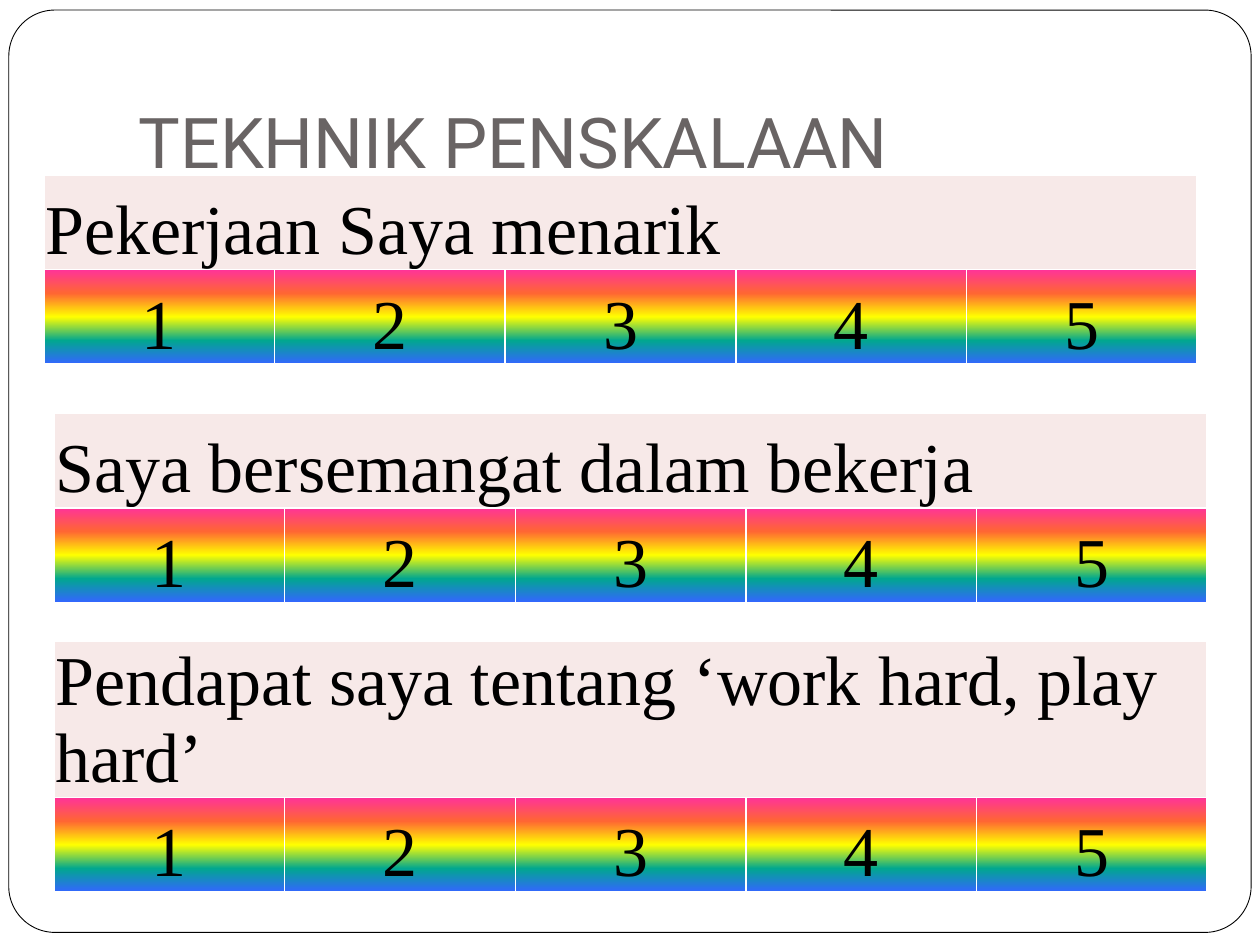
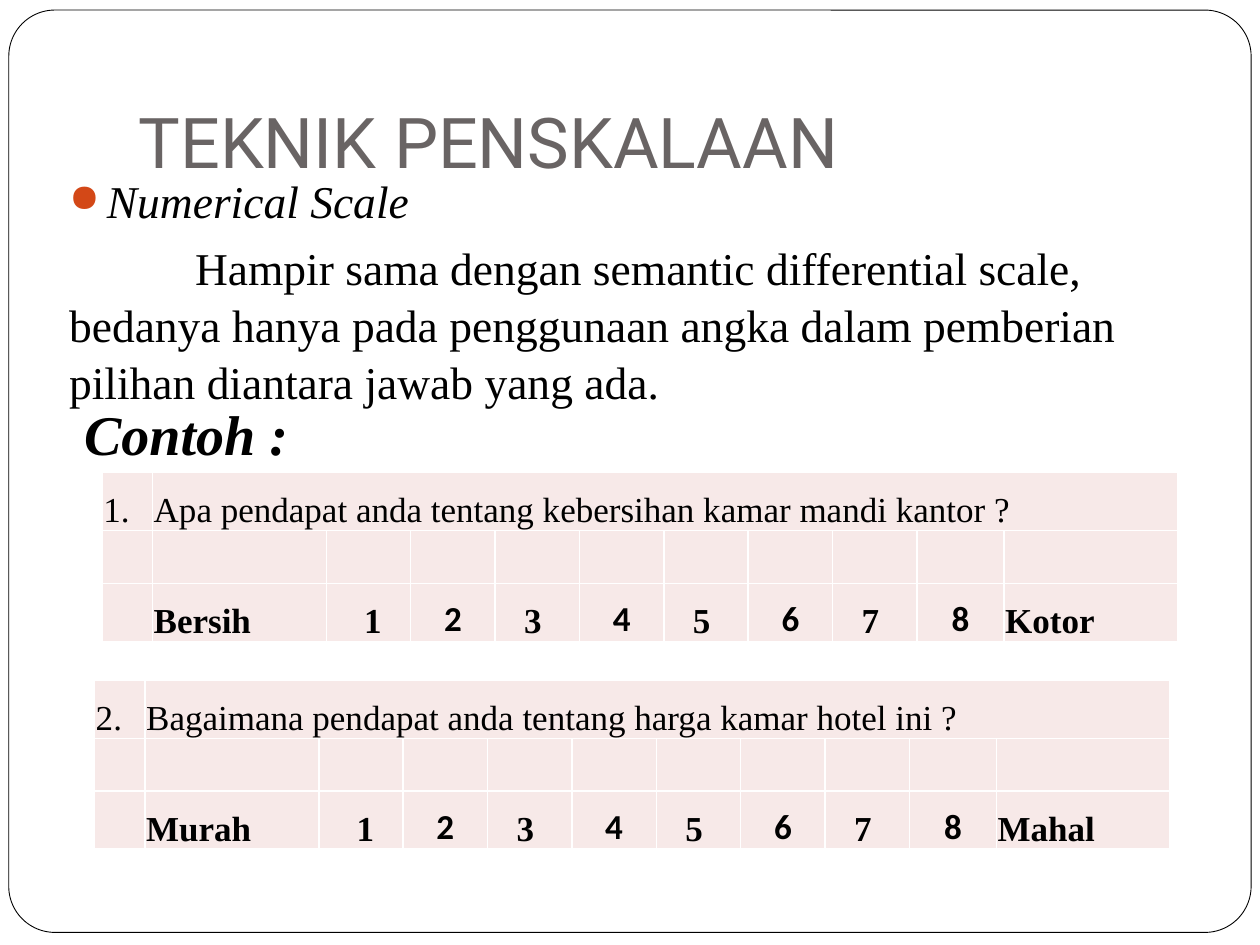
"""Build two slides on scaling techniques with rating-scale tables."""
from dataclasses import dataclass
from typing import Optional

from lxml.etree import SubElement
from pptx import Presentation
from pptx.dml.color import RGBColor
from pptx.enum.shapes import MSO_SHAPE
from pptx.enum.text import MSO_ANCHOR, PP_ALIGN
from pptx.oxml import parse_xml
from pptx.oxml.ns import nsdecls, qn
from pptx.util import Inches, Pt

BLACK = RGBColor(0x00, 0x00, 0x00)
WHITE = RGBColor(0xFF, 0xFF, 0xFF)
TITLE_GRAY = RGBColor(0x69, 0x64, 0x64)
CELL_PINK = RGBColor(0xF7, 0xE9, 0xE8)
BULLET_ORANGE = RGBColor(0xD3, 0x48, 0x17)
RAINBOW = (
    RGBColor(0xFF, 0x33, 0x99),
    RGBColor(0xFF, 0x66, 0x33),
    RGBColor(0xFF, 0xFF, 0x00),
    RGBColor(0x01, 0xA7, 0x8F),
    RGBColor(0x33, 0x66, 0xFF),
)
SERIF = "Times New Roman"
SANS = "Calibri"
TITLE_FONT = "Roboto"
CELL_MARGIN = 0.01
DIGIT_SHIFT = 0.07


@dataclass(frozen=True)
class TextStyle:
    """Character formatting of a run."""

    size: float
    font: str = SERIF
    color: RGBColor = BLACK
    bold: bool = False
    italic: bool = False


@dataclass(frozen=True)
class RatingScale:
    """A statement rated from 1 to 5."""

    left: float
    top: float
    statement: str


@dataclass(frozen=True)
class NumericalScale:
    """A numbered question rated between two opposite words."""

    left: float
    top: float
    number: str
    question: str
    low_word: str
    high_word: str


RATING_SCALES = (
    RatingScale(0.35, 1.39, "Pekerjaan Saya menarik"),
    RatingScale(0.43, 3.28, "Saya bersemangat dalam bekerja"),
    RatingScale(0.43, 5.09, "Pendapat saya tentang ‘work hard, play hard’"),
)
NUMERICAL_SCALES = (
    NumericalScale(0.81, 3.75, "1.", "Apa pendapat anda tentang kebersihan kamar mandi kantor ?",
                   "Bersih", "Kotor"),
    NumericalScale(0.75, 5.4, "2.", "Bagaimana pendapat anda tentang harga kamar hotel ini ?",
                   "Murah", "Mahal"),
)
RATING_WIDTHS = [1.826] * 5
RATING_WIDTHS = [1.83] * 5
RATING_HEIGHTS = [0.75] * 2
NUMERICAL_WIDTHS = [0.4, 1.38] + [0.67] * 7 + [0.69, 1.38]
NUMERICAL_HEIGHTS = [0.46, 0.42, 0.46]


def add_run(paragraph, text: str, style: TextStyle) -> None:
    """Append a formatted run to a paragraph."""
    run = paragraph.add_run()
    run.text = text
    run.font.size = Pt(style.size)
    run.font.name = style.font
    run.font.color.rgb = style.color
    run.font.bold = style.bold
    run.font.italic = style.italic


def add_frame(slide) -> None:
    """Draw the rounded frame and place it on the layout of the slide."""
    frame = slide.shapes.add_shape(
        MSO_SHAPE.ROUNDED_RECTANGLE, Inches(0.07), Inches(0.08), Inches(9.86), Inches(7.32))
    frame.adjustments[0] = 0.05
    frame.shadow.inherit = False
    frame.fill.solid()
    frame.fill.fore_color.rgb = WHITE
    frame.line.color.rgb = BLACK
    frame.line.width = Pt(0.5)
    slide.slide_layout.shapes._spTree.insert(2, frame._element)


def set_title(slide, text: str) -> None:
    """Place and format the title placeholder."""
    title = slide.shapes.title
    title.left, title.top = Inches(1), Inches(0.3)
    title.width, title.height = Inches(8.5), Inches(1.25)
    text_frame = title.text_frame
    text_frame.vertical_anchor = MSO_ANCHOR.BOTTOM
    text_frame.margin_bottom = Inches(0.1)
    paragraph = text_frame.paragraphs[0]
    paragraph.alignment = PP_ALIGN.LEFT
    add_run(paragraph, text, TextStyle(40, TITLE_FONT, TITLE_GRAY))


def add_text_frame(slide, left: float, top: float, width: float, height: float):
    """Add a wrapping text box and return its text frame."""
    box = slide.shapes.add_textbox(Inches(left), Inches(top), Inches(width), Inches(height))
    box.text_frame.word_wrap = True
    return box.text_frame


def set_indent(paragraph, margin: float, first_line: float) -> None:
    """Set the left margin and first-line indent of a paragraph."""
    properties = paragraph._p.get_or_add_pPr()
    properties.set("marL", str(Inches(margin)))
    properties.set("indent", str(Inches(first_line)))


def add_bullet(paragraph) -> None:
    """Give a paragraph a round orange bullet."""
    properties = paragraph._p.get_or_add_pPr()
    color = SubElement(properties, qn("a:buClr"))
    SubElement(color, qn("a:srgbClr")).set("val", str(BULLET_ORANGE))
    SubElement(properties, qn("a:buSzPct")).set("val", "85000")
    SubElement(properties, qn("a:buChar")).set("char", "●")


def border_cell(cell) -> None:
    """Draw white one-point borders on all sides of a cell."""
    properties = cell._tc.get_or_add_tcPr()
    for index, side in enumerate(("lnL", "lnR", "lnT", "lnB")):
        properties.insert(index, parse_xml(
            f'<a:{side} {nsdecls("a")} w="{Pt(1)}"><a:solidFill>'
            f'<a:srgbClr val="{WHITE}"/></a:solidFill></a:{side}>'))


def fill_rainbow(cell) -> None:
    """Fill a cell with the vertical rainbow gradient."""
    cell.fill.background()
    properties = cell._tc.get_or_add_tcPr()
    step = 100000 // (len(RAINBOW) - 1)
    stops = "".join(f'<a:gs pos="{index * step}"><a:srgbClr val="{color}"/></a:gs>'
                    for index, color in enumerate(RAINBOW))
    gradient = parse_xml(f'<a:gradFill {nsdecls("a")}><a:gsLst>{stops}</a:gsLst>'
                         '<a:lin ang="5400000" scaled="0"/></a:gradFill>')
    properties.replace(properties.find(qn("a:noFill")), gradient)


def add_plain_table(slide, left: float, top: float, widths: list[float], heights: list[float]):
    """Add a pink table with white borders and return it."""
    table = slide.shapes.add_table(
        len(heights), len(widths), Inches(left), Inches(top),
        Inches(sum(widths)), Inches(sum(heights))).table
    table.first_row = False
    table.horz_banding = False
    for column, width in zip(table.columns, widths):
        column.width = Inches(width)
    for row, height in zip(table.rows, heights):
        row.height = Inches(height)
    for cell in table.iter_cells():
        cell.fill.solid()
        cell.fill.fore_color.rgb = CELL_PINK
        border_cell(cell)
    return table


def write_cell(cell, text: str, style: TextStyle, alignment: Optional[PP_ALIGN] = None,
               left_shift: float = 0, right_shift: float = 0) -> None:
    """Write bottom-anchored text into a cell."""
    cell.vertical_anchor = MSO_ANCHOR.BOTTOM
    cell.margin_left = Inches(CELL_MARGIN + left_shift)
    cell.margin_right = Inches(CELL_MARGIN + right_shift)
    cell.margin_top = Inches(CELL_MARGIN)
    cell.margin_bottom = Inches(0)
    paragraph = cell.text_frame.paragraphs[0]
    paragraph.alignment = alignment
    add_run(paragraph, text, style)


def add_rating_scale(slide, scale: RatingScale) -> None:
    """Draw a statement above its five rainbow ratings."""
    table = add_plain_table(slide, scale.left, scale.top, RATING_WIDTHS, RATING_HEIGHTS)
    style = TextStyle(40)
    table.cell(0, 0).merge(table.cell(0, len(RATING_WIDTHS) - 1))
    write_cell(table.cell(0, 0), scale.statement, style)
    for column in range(len(RATING_WIDTHS)):
        cell = table.cell(1, column)
        fill_rainbow(cell)
        write_cell(cell, str(column + 1), style, PP_ALIGN.CENTER)


def add_numerical_scale(slide, scale: NumericalScale) -> None:
    """Draw a question above eight ratings between two words."""
    table = add_plain_table(slide, scale.left, scale.top, NUMERICAL_WIDTHS, NUMERICAL_HEIGHTS)
    last = len(NUMERICAL_WIDTHS) - 1
    plain, bold = TextStyle(20), TextStyle(20, bold=True)
    table.cell(0, 1).merge(table.cell(0, last))
    write_cell(table.cell(0, 0), scale.number, plain)
    write_cell(table.cell(0, 1), scale.question, plain)
    write_cell(table.cell(2, 1), scale.low_word, bold)
    write_cell(table.cell(2, last), scale.high_word, bold)
    for rating in range(1, 9):
        odd = rating % 2 == 1
        style = bold if odd else TextStyle(20, SANS, bold=True)
        write_cell(table.cell(2, rating + 1), str(rating), style, PP_ALIGN.CENTER,
                   left_shift=DIGIT_SHIFT if rating == 1 else 0,
                   right_shift=DIGIT_SHIFT if odd and rating > 1 else 0)


def add_explanation(slide) -> None:
    """Write the description of the numerical scale and the example heading."""
    text_frame = add_text_frame(slide, 0.45, 1.31, 9.22, 2)
    heading = text_frame.paragraphs[0]
    description = text_frame.add_paragraph()
    for paragraph in (heading, description):
        paragraph.space_before = Pt(5.8)
        paragraph.line_spacing = 1.04
    set_indent(heading, 0.3, -0.3)
    add_bullet(heading)
    add_run(heading, "Numerical Scale", TextStyle(26, italic=True))
    set_indent(description, 0, 1)
    add_run(description, "Hampir sama dengan semantic differential scale, bedanya hanya pada "
            "penggunaan angka dalam pemberian pilihan diantara jawab yang ada.", TextStyle(26))

    example = add_text_frame(slide, 0.57, 3.12, 9, 0.63).paragraphs[0]
    example.space_before = Pt(6.4)
    add_run(example, "Contoh :", TextStyle(32, bold=True, italic=True))


def main() -> None:
    """Build and save the presentation."""
    presentation = Presentation()
    presentation.slide_width, presentation.slide_height = Inches(10), Inches(7.5)
    layout = presentation.slide_layouts[5]

    rating_slide = presentation.slides.add_slide(layout)
    add_frame(rating_slide)
    set_title(rating_slide, "TEKHNIK PENSKALAAN")
    for scale in RATING_SCALES:
        add_rating_scale(rating_slide, scale)

    numerical_slide = presentation.slides.add_slide(layout)
    set_title(numerical_slide, "TEKNIK PENSKALAAN")
    add_explanation(numerical_slide)
    for scale in NUMERICAL_SCALES:
        add_numerical_scale(numerical_slide, scale)

    presentation.save("out.pptx")


if __name__ == "__main__":
    main()
